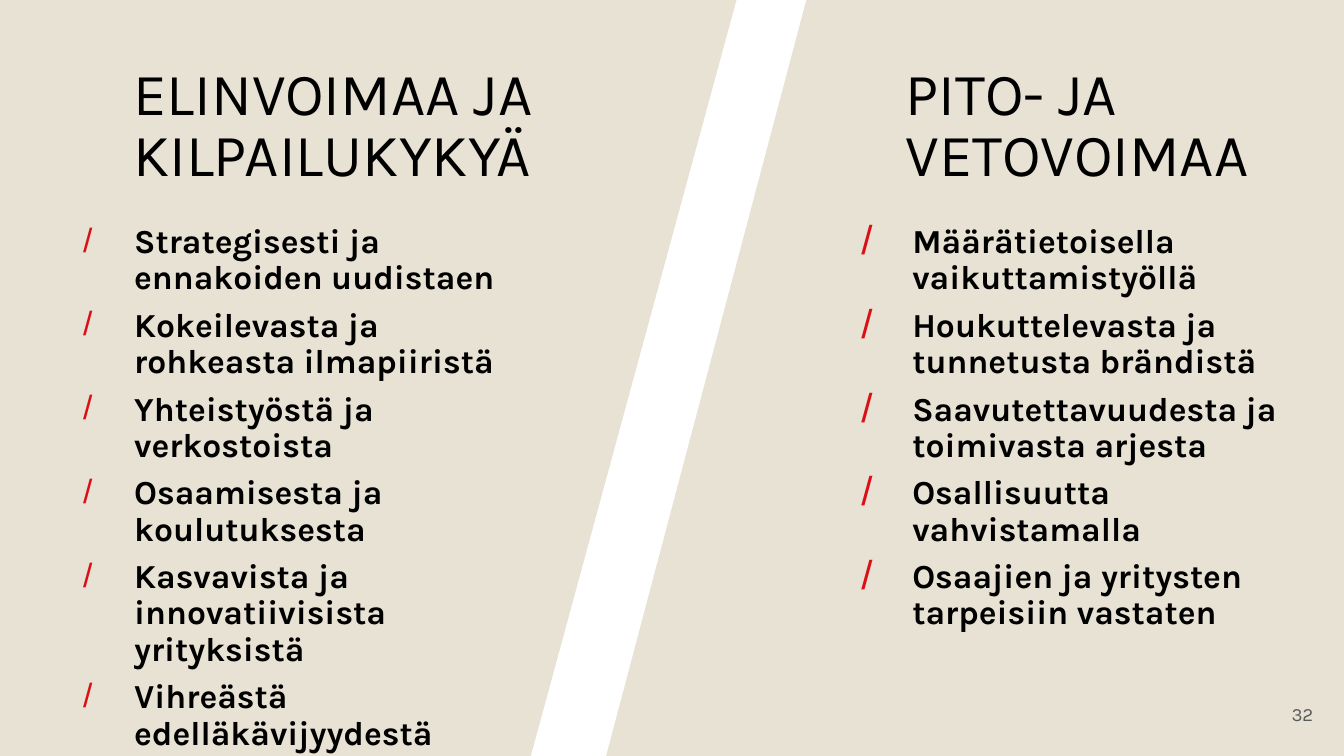
from lxml.etree import SubElement
from pptx import Presentation
from pptx.dml.color import RGBColor
from pptx.enum.text import MSO_ANCHOR, MSO_AUTO_SIZE, PP_ALIGN
from pptx.oxml.ns import qn
from pptx.util import Inches, Pt

FONT = "Karla"
BULLET_FONT = "Arial"
BLACK = "000000"
SAND = "E7E2D3"
RED = "DB0F16"
GREY = "595959"
WIDTH = 10
HEIGHT = WIDTH * 9 / 16

LEFT_HEADING = ["ELINVOIMAA JA", "KILPAILUKYKYÄ"]
RIGHT_HEADING = ["PITO- JA", "VETOVOIMAA"]
LEFT_POINTS = [
    "Strategisesti ja ennakoiden uudistaen",
    "Kokeilevasta ja rohkeasta ilmapiiristä",
    "Yhteistyöstä ja verkostoista",
    "Osaamisesta ja koulutuksesta",
    "Kasvavista ja innovatiivisista yrityksistä",
    "Vihreästä edelläkävijyydestä",
]
RIGHT_POINTS = [
    "Määrätietoisella vaikuttamistyöllä",
    "Houkuttelevasta ja tunnetusta brändistä",
    "Saavutettavuudesta ja toimivasta arjesta",
    "Osallisuutta vahvistamalla",
    "Osaajien ja yritysten tarpeisiin vastaten",
]


def color(value):
    """Turn a hex string into a colour."""
    return RGBColor.from_string(value)


def add_panel(slide, points):
    """Draw a sand-coloured background panel through the given points."""
    corners = [(Inches(x), Inches(y)) for x, y in points]
    builder = slide.shapes.build_freeform(*corners[0], scale=1.0)
    builder.add_line_segments(corners[1:], close=True)
    shape = builder.convert_to_shape()
    shape.shadow.inherit = False
    shape.fill.solid()
    shape.fill.fore_color.rgb = color(SAND)
    shape.line.fill.background()


def add_run(paragraph, text, size, value=BLACK, bold=False):
    """Add one formatted run of text."""
    run = paragraph.add_run()
    run.text = text
    run.font.name = FONT
    run.font.size = Pt(size)
    run.font.bold = bold
    run.font.color.rgb = color(value)


def format_frame(shape, box, anchor=MSO_ANCHOR.TOP):
    """Place a text shape and return its prepared text frame."""
    shape.left, shape.top, shape.width, shape.height = map(Inches, box)
    frame = shape.text_frame
    frame.word_wrap = True
    frame.auto_size = MSO_AUTO_SIZE.NONE
    frame.vertical_anchor = anchor
    frame.margin_left = frame.margin_right = Inches(0.1)
    frame.margin_top = frame.margin_bottom = Inches(0.1)
    return frame


def add_text_box(slide, box):
    """Add an empty text box."""
    return slide.shapes.add_textbox(*map(Inches, box))


def write_heading(shape, box, lines):
    """Write a heading with one line break between its lines."""
    paragraph = format_frame(shape, box).paragraphs[0]
    paragraph.alignment = PP_ALIGN.LEFT
    paragraph.line_spacing = 0.85
    for index, line in enumerate(lines):
        if index:
            paragraph.add_line_break()
        add_run(paragraph, line, 32)


def set_bullet(paragraph, size_percent):
    """Give a paragraph a red slash bullet with a hanging indent."""
    properties = paragraph._p.get_or_add_pPr()
    properties.set("marL", str(Inches(0.5)))
    properties.set("indent", str(Inches(-0.38)))
    bullet_color = SubElement(properties, qn("a:buClr"))
    SubElement(bullet_color, qn("a:srgbClr"), val=RED)
    SubElement(properties, qn("a:buSzPct"), val=str(size_percent * 1000))
    SubElement(properties, qn("a:buFont"), typeface=BULLET_FONT)
    SubElement(properties, qn("a:buChar"), char="/")


def add_bullet_list(slide, box, points, size_percent=100):
    """Add a list of bold bullet points."""
    frame = format_frame(add_text_box(slide, box), box)
    for index, point in enumerate(points):
        paragraph = frame.add_paragraph() if index else frame.paragraphs[0]
        paragraph.line_spacing = 0.9
        paragraph.space_after = Pt(6)
        set_bullet(paragraph, size_percent)
        add_run(paragraph, point, 18, bold=True)


def add_page_number(slide, number):
    """Add the page number in the lower right corner."""
    box = (9.27, 5.1, 0.6, 0.43)
    frame = format_frame(add_text_box(slide, box), box, MSO_ANCHOR.MIDDLE)
    paragraph = frame.paragraphs[0]
    paragraph.alignment = PP_ALIGN.RIGHT
    add_run(paragraph, number, 10, GREY)


def main():
    """Build the slide and save the presentation."""
    presentation = Presentation()
    presentation.slide_width = Inches(WIDTH)
    presentation.slide_height = Inches(HEIGHT)
    slide = presentation.slides.add_slide(presentation.slide_layouts[5])
    slide.background.fill.solid()
    slide.background.fill.fore_color.rgb = color("FFFFFF")

    add_panel(slide, [(6, 0), (WIDTH, 0), (WIDTH, HEIGHT), (4.51, HEIGHT)])
    add_panel(slide, [(0, 0), (5.48, 0), (3.95, HEIGHT), (0, HEIGHT)])

    title = slide.shapes.title
    title.element.getparent().append(title.element)
    write_heading(title, (0.89, 0.4, 3.87, 0.63), LEFT_HEADING)
    add_bullet_list(slide, (0.4, 1.57, 3.71, 4.07), LEFT_POINTS)
    add_bullet_list(slide, (6.19, 1.57, 3.43, 4.07), RIGHT_POINTS, 120)
    right_box = (6.64, 0.4, 3.22, 0.63)
    write_heading(add_text_box(slide, right_box), right_box, RIGHT_HEADING)
    add_page_number(slide, "32")

    presentation.save("out.pptx")


if __name__ == "__main__":
    main()
